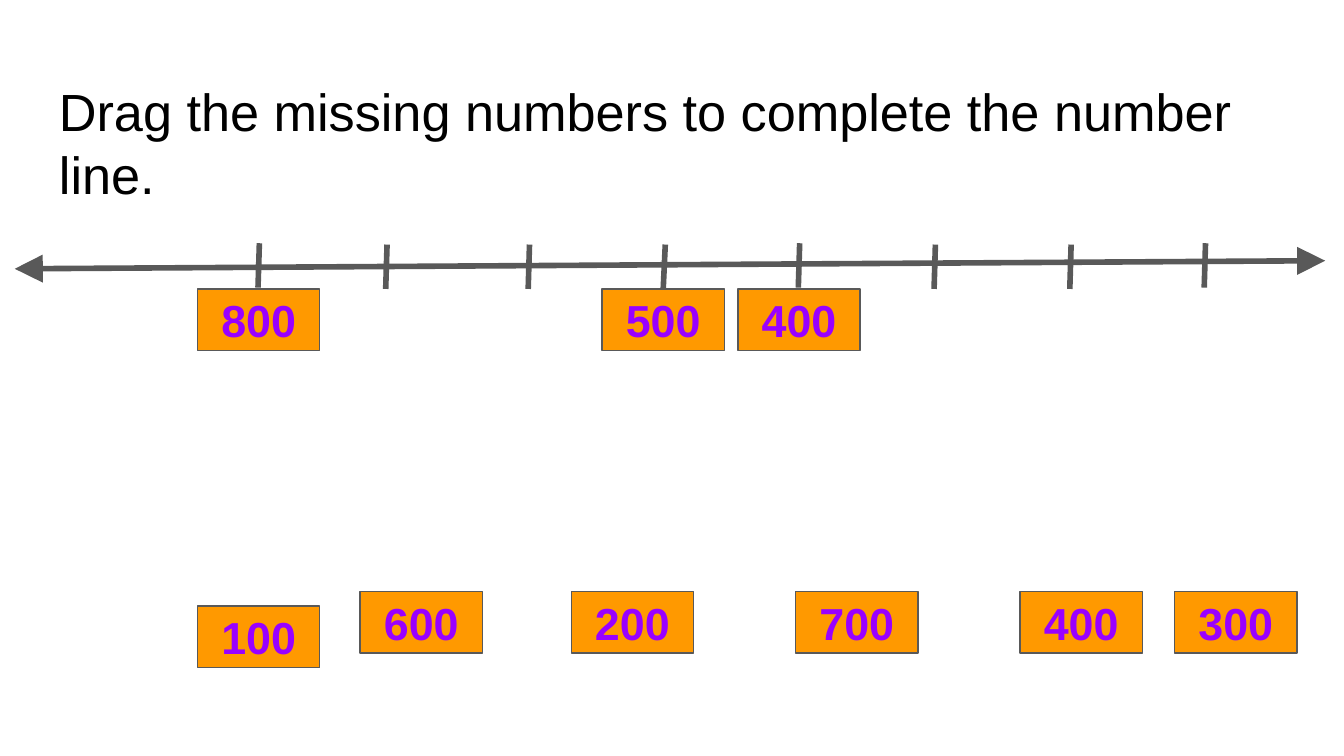
from lxml import etree
from pptx import Presentation
from pptx.dml.color import RGBColor
from pptx.enum.shapes import MSO_CONNECTOR, MSO_SHAPE
from pptx.enum.text import MSO_ANCHOR, PP_ALIGN
from pptx.oxml.ns import qn
from pptx.util import Inches, Pt

GRAY = "595959"


def style_text(frame, size, color, bold=False):
    frame.word_wrap = True
    frame.margin_left = frame.margin_right = Inches(0.1)
    frame.margin_top = frame.margin_bottom = Inches(0.1)
    font = frame.paragraphs[0].runs[0].font
    font.name, font.size, font.bold = "Arial", Pt(size), bold
    font.color.rgb = RGBColor.from_string(color)


def add_line(x1, y1, x2, y2):
    line = slide.shapes.add_connector(
        MSO_CONNECTOR.STRAIGHT, Inches(x1), Inches(y1), Inches(x2), Inches(y2))
    line.line.color.rgb = RGBColor.from_string(GRAY)
    line.line.width = Pt(3)
    etree.SubElement(line._element.spPr, qn("a:effectLst"))
    return line


# Widescreen 16:9 slide
presentation = Presentation()
presentation.slide_width = Inches(10)
presentation.slide_height = Inches(10 * 9 / 16)
slide = presentation.slides.add_slide(presentation.slide_layouts[6])

# Instruction
instruction = slide.shapes.add_textbox(Inches(0.34), Inches(0.49), Inches(9.32), Inches(1))
instruction.text_frame.text = "Drag the missing numbers to complete the number line."
style_text(instruction.text_frame, 28, "000000")

# Number line with a large arrowhead at each end
number_line = add_line(0.11, 2, 9.86, 1.94)
outline = number_line.line._get_or_add_ln()
for end in ("a:headEnd", "a:tailEnd"):
    etree.SubElement(outline, qn(end), type="triangle", w="lg", len="lg")

# Number cards: three placed on the line, six to drag
cards = [
    ("800", 1.47, 2.15), ("500", 4.48, 2.15), ("400", 5.49, 2.15),
    ("100", 1.47, 4.51), ("600", 2.68, 4.4), ("200", 4.25, 4.4),
    ("700", 5.92, 4.4), ("400", 7.59, 4.4), ("300", 8.74, 4.4),
]
placed_cards = {}
for number, left, top in cards:
    card = slide.shapes.add_shape(
        MSO_SHAPE.RECTANGLE, Inches(left), Inches(top), Inches(0.91), Inches(0.46))
    card.shadow.inherit = False
    card.fill.solid()
    card.fill.fore_color.rgb = RGBColor.from_string("FF9900")
    card.line.color.rgb = RGBColor.from_string(GRAY)
    card.line.width = Pt(0.75)
    card.text_frame.text = number
    card.text_frame.vertical_anchor = MSO_ANCHOR.MIDDLE
    card.text_frame.paragraphs[0].alignment = PP_ALIGN.CENTER
    style_text(card.text_frame, 24, "9900FF", bold=True)
    if top == 2.15:
        placed_cards[number] = card

# Slightly slanted ticks; the one for 500 touches its card
ticks = [(1.93, 1.81), (2.88, 1.82), (3.94, 1.82), (4.95, 1.82),
         (5.95, 1.81), (6.96, 1.82), (7.97, 1.82), (8.97, 1.81)]
for x, top in ticks:
    tick = add_line(x, top, x - 0.01, top + 0.33)
    if x == 4.95:
        tick.end_connect(placed_cards["500"], 0)

presentation.save("out.pptx")
